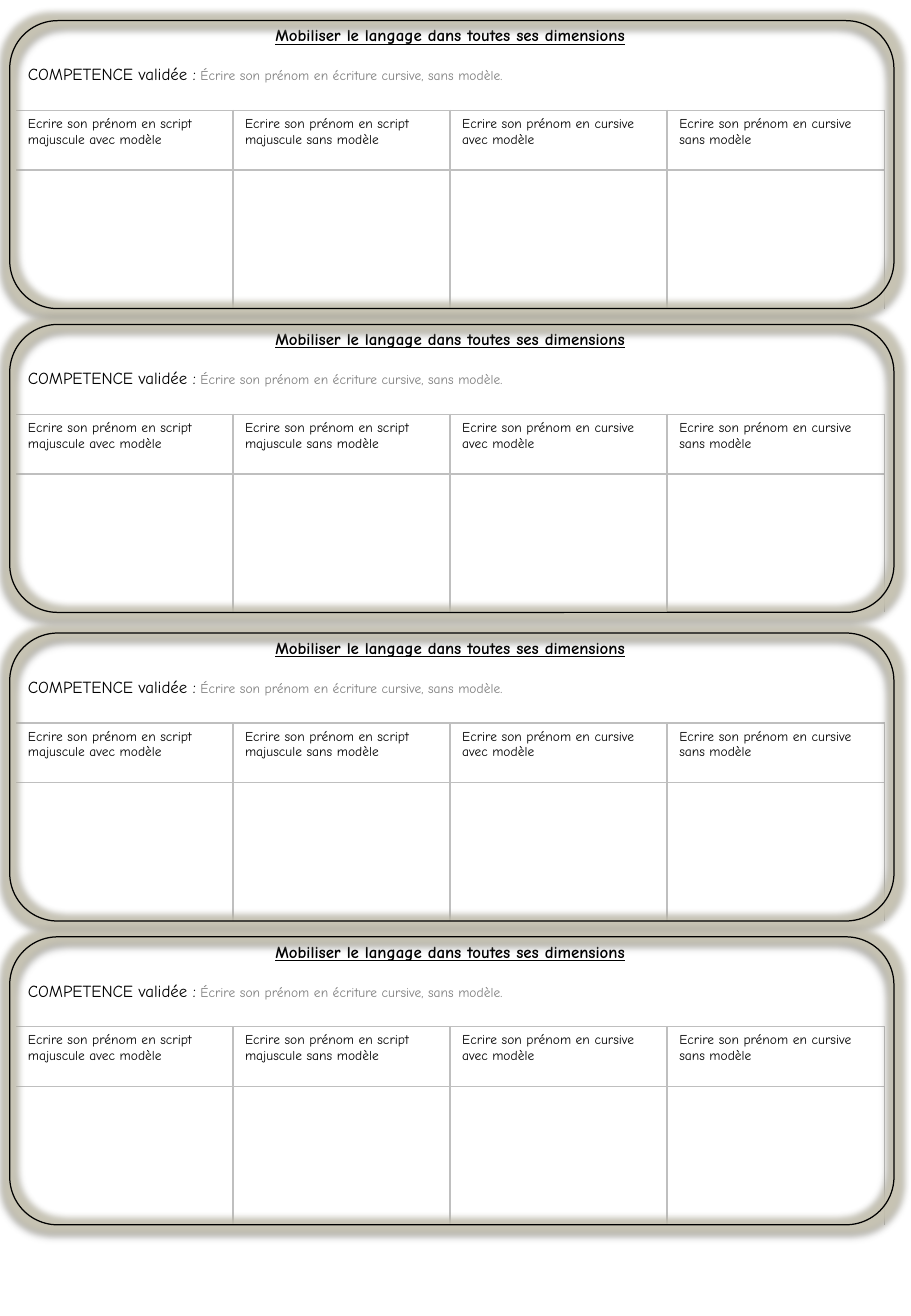
import pptx
import pptx.dml.color
import pptx.enum.shapes
import pptx.enum.text
import pptx.oxml
import pptx.oxml.ns
import pptx.util

BLACK = pptx.dml.color.RGBColor(0x00, 0x00, 0x00)
GREY = pptx.dml.color.RGBColor(0x7F, 0x7F, 0x7F)
RULE = pptx.dml.color.RGBColor(0xBF, 0xBF, 0xBF)
HALO = pptx.dml.color.RGBColor(0xCB, 0xC7, 0xB5)

FONT = "Comic Neue"
NO_STYLE = "{2D5ABB26-0587-4C30-8999-92F81FD0307C}"

# Page grid, in inches: two pairs of cards, one column per writing stage
WIDTH, HEIGHT = 7.5, 10.83
TOP, PITCH, PAIR_GAP = 0.17, 2.5, 0.04
CARD_LEFT, CARD_W, CARD_H = 0.08, 7.28, 2.37
TABLE_LEFT, TABLE_W = 0.13, 7.15
ROWS = (0.74, 0.49, 1.14)
CARDS = 4

TITLE = "Mobiliser le langage dans toutes ses dimensions"
LABEL = "COMPETENCE validée :"
SKILL = " Écrire son prénom en écriture cursive, sans modèle."
STAGES = (
    "Ecrire son prénom en script majuscule avec modèle",
    "Ecrire son prénom en script majuscule sans modèle",
    "Ecrire son prénom en cursive avec modèle",
    "Ecrire son prénom en cursive sans modèle",
)


def inch(value):
    return pptx.util.Inches(value)


def add_text(p, text, size=8, color=BLACK, bold=False, underline=False):
    r = p.add_run()
    r.text = text
    r.font.name = FONT
    r.font.size = pptx.util.Pt(size)
    r.font.color.rgb = color
    r.font.bold = bold
    r.font.underline = underline


def set_borders(cell, sides):
    """Draw a grey rule on the given sides (letters of LRTB), none elsewhere."""
    tcPr = cell._tc.get_or_add_tcPr()
    ns = pptx.oxml.ns.nsdecls("a")
    for i, side in enumerate("LRTB"):
        paint = (f'<a:solidFill><a:srgbClr val="{RULE}"/></a:solidFill>'
                 if side in sides else "<a:noFill/>")
        ln = pptx.oxml.parse_xml(f'<a:ln{side} {ns} w="12700">{paint}</a:ln{side}>')
        tcPr.insert(i, ln)


def add_skill_table(slide, top):
    n = len(STAGES)
    frame = slide.shapes.add_table(len(ROWS), n, inch(TABLE_LEFT), inch(top),
                                   inch(TABLE_W), inch(sum(ROWS)))
    table = frame.table
    table.first_row = table.horz_banding = False
    table._tbl.tblPr.find(pptx.oxml.ns.qn("a:tableStyleId")).text = NO_STYLE
    for row, height in zip(table.rows, ROWS):
        row.height = inch(height)
    for col in table.columns:
        col.width = inch(TABLE_W / n)

    # Rules: under the heading, under the stages, right of every column
    for i in range(len(ROWS)):
        for j in range(n):
            cell = table.cell(i, j)
            cell.fill.background()
            left = "L" if j else ""
            set_borders(cell, ("B", left + "RTB", left + "RT")[i])

    # Heading
    head = table.cell(0, 0)
    head.merge(table.cell(0, n - 1))
    p = head.text_frame.paragraphs[0]
    p.alignment = pptx.enum.text.PP_ALIGN.CENTER
    add_text(p, TITLE, size=10, bold=True, underline=True)
    p = head.text_frame.add_paragraph()
    p.space_before = pptx.util.Pt(11.5)
    add_text(p, LABEL, size=10)
    add_text(p, SKILL, color=GREY)

    # Stages
    for j, stage in enumerate(STAGES):
        add_text(table.cell(1, j).text_frame.paragraphs[0], stage)


def add_card_frame(slide, top):
    sp = slide.shapes.add_shape(pptx.enum.shapes.MSO_SHAPE.ROUNDED_RECTANGLE,
                                inch(CARD_LEFT), inch(top), inch(CARD_W), inch(CARD_H))
    sp.fill.background()
    sp.line.color.rgb = BLACK
    sp.line.width = pptx.util.Pt(0.75)
    sp.shadow.inherit = False
    # Halo and soft shadow around the outline
    effects = sp._element.spPr.find(pptx.oxml.ns.qn("a:effectLst"))
    ns = pptx.oxml.ns.nsdecls("a")
    effects.append(pptx.oxml.parse_xml(
        f'<a:glow {ns} rad="101600"><a:srgbClr val="{HALO}">'
        '<a:alpha val="90000"/></a:srgbClr></a:glow>'))
    effects.append(pptx.oxml.parse_xml(
        f'<a:outerShdw {ns} blurRad="39370" dist="20320" dir="5400000" rotWithShape="0">'
        f'<a:srgbClr val="{BLACK}"><a:alpha val="38000"/></a:srgbClr></a:outerShdw>'))


def main():
    prs = pptx.Presentation()
    prs.slide_width, prs.slide_height = inch(WIDTH), inch(HEIGHT)
    slide = prs.slides.add_slide(prs.slide_layouts[6])
    for i in range(CARDS):
        top = TOP + i * PITCH + i // 2 * PAIR_GAP
        add_skill_table(slide, top)
        add_card_frame(slide, top)
    prs.save("out.pptx")


if __name__ == "__main__":
    main()
